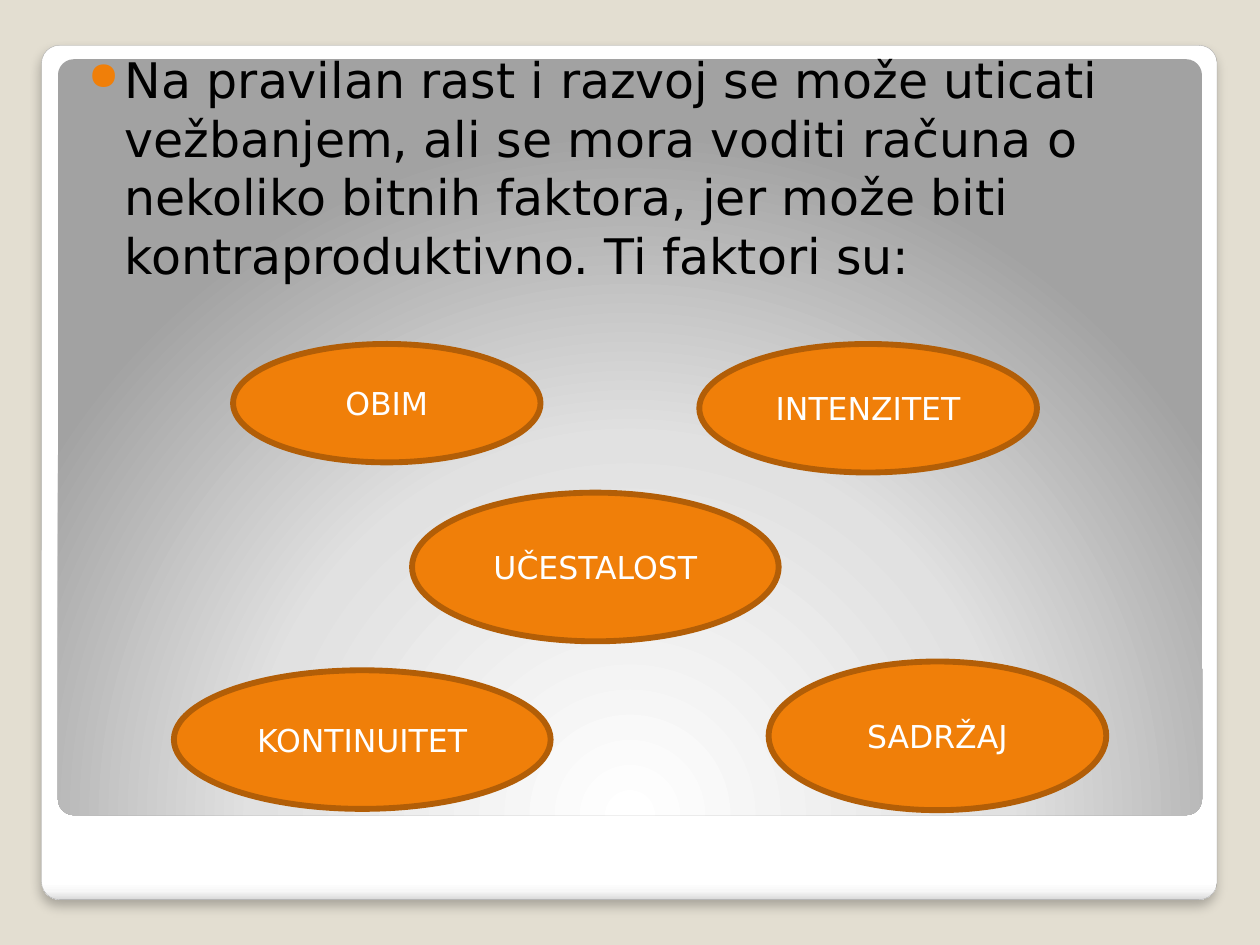
from lxml import etree
from pptx import Presentation
from pptx.dml.color import RGBColor
from pptx.enum.shapes import MSO_SHAPE
from pptx.enum.text import MSO_ANCHOR, PP_ALIGN
from pptx.oxml import parse_xml
from pptx.oxml.ns import nsdecls, qn
from pptx.util import Inches, Pt

ROUND, OVAL = MSO_SHAPE.ROUNDED_RECTANGLE, MSO_SHAPE.OVAL
MIDDLE, CENTER = MSO_ANCHOR.MIDDLE, PP_ALIGN.CENTER
FONT = "DejaVu Sans"
COLORS = {
    "back": "E3DED1", "edge": "A4A4A4", "orange": "F07F09",
    "rim": "B25E07", "white": "FFFFFF", "black": "000000",
}
RGB = {name: RGBColor.from_string(code) for name, code in COLORS.items()}


def add_panel(box, stops, path):
    """Add a rounded panel with a gradient; path is its lin or path element."""
    panel = slide.shapes.add_shape(ROUND, *map(Inches, box))
    panel.adjustments[0] = 0.021
    panel.shadow.inherit = False
    marks = "".join(
        f'<a:gs pos="{pos * 1000}"><a:srgbClr val="{code}"/></a:gs>'
        for pos, code in stops
    )
    grad = parse_xml(
        f'<a:gradFill {nsdecls("a")} rotWithShape="1">'
        f"<a:gsLst>{marks}</a:gsLst>{path}</a:gradFill>"
    )
    panel._element.spPr.find(qn("a:prstGeom")).addnext(grad)
    return panel


def style_run(par, size, color):
    font = par.runs[0].font
    font.name, font.size, font.color.rgb = FONT, Pt(size), RGB[color]


prs = Presentation()
prs.slide_width, prs.slide_height = Inches(10), Inches(7.5)
slide = prs.slides.add_slide(prs.slide_layouts[6])
slide.background.fill.solid()
slide.background.fill.fore_color.rgb = RGB["back"]

# Card and inner panel
card = add_panel(
    (0.33, 0.36, 9.33, 6.78),
    [(0, "FFFFFF"), (98, "FFFFFF"), (99, "F7F7F7"), (100, "DADADA")],
    '<a:lin ang="5400000" scaled="0"/>',
)
card.line.color.rgb = RGB["edge"]
card.line.width = Pt(0.16)
card._element.spPr.find(qn("a:effectLst")).append(parse_xml(
    f'<a:outerShdw {nsdecls("a")} blurRad="{Pt(6)}" dist="{Pt(4)}" '
    f'dir="5400000" algn="t" rotWithShape="0"><a:srgbClr val="{COLORS["black"]}">'
    '<a:alpha val="25000"/></a:srgbClr></a:outerShdw>'
))
inner = add_panel(
    (0.46, 0.47, 9.08, 6),
    [(0, "FFFFFF"), (55, "E1E1E1"), (100, "A2A2A2")],
    '<a:path path="circle">'
    '<a:fillToRect l="50000" t="175000" r="50000" b="-75000"/></a:path>',
)
inner.line.fill.background()

# Bulleted statement
body = slide.shapes.add_textbox(*map(Inches, (0.5, 0.29, 9, 6.41)))
frame = body.text_frame
frame.word_wrap = True
frame.margin_left, frame.margin_top = Inches(0.2), Inches(0.1)
frame.margin_right, frame.margin_bottom = Inches(0.1), Inches(0.05)
par = frame.paragraphs[0]
par.text = (
    "Na pravilan rast i razvoj se može uticati vežbanjem, ali se mora voditi "
    "računa o nekoliko bitnih faktora, jer može biti kontraproduktivno. "
    "Ti faktori su:"
)
par.space_before = Pt(2.5)
style_run(par, 28, "black")
props = par._p.get_or_add_pPr()
props.set("marL", str(Inches(0.29)))
props.set("indent", str(-Inches(0.29)))
tint = etree.SubElement(props, qn("a:buClr"))
etree.SubElement(tint, qn("a:srgbClr"), val=COLORS["orange"])
etree.SubElement(props, qn("a:buSzPct"), val="80000")
etree.SubElement(props, qn("a:buChar"), char="●")

# Factors
factors = [
    ("OBIM", 1.85, 2.73, 2.44, 0.94),
    ("INTENZITET", 5.55, 2.73, 2.68, 1.02),
    ("UČESTALOST", 3.27, 3.91, 2.91, 1.18),
    ("KONTINUITET", 1.38, 5.32, 2.99, 1.1),
    ("SADRŽAJ", 6.1, 5.25, 2.68, 1.18),
]
for label, *box in factors:
    oval = slide.shapes.add_shape(OVAL, *map(Inches, box))
    oval.shadow.inherit = False
    oval.fill.solid()
    oval.fill.fore_color.rgb = RGB["orange"]
    oval.line.color.rgb = RGB["rim"]
    oval.line.width = Pt(3.35)
    oval.text_frame.text = label
    oval.text_frame.vertical_anchor = MIDDLE
    par = oval.text_frame.paragraphs[0]
    par.alignment = CENTER
    style_run(par, 18, "white")

prs.save("out.pptx")
